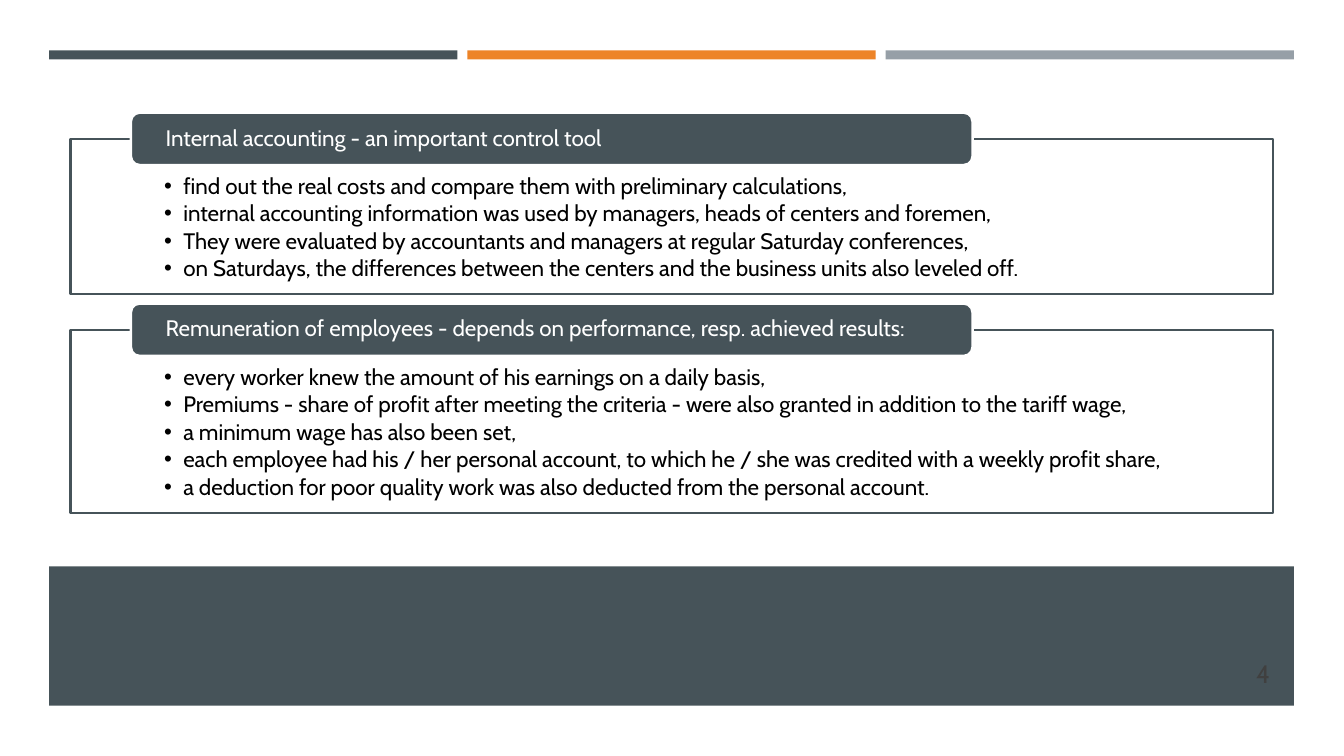
from lxml import etree
from pptx import Presentation
from pptx import util as u
from pptx.dml import color
from pptx.enum import shapes, text
from pptx.oxml import ns

SLATE, ORANGE, GREY, WHITE = "465359", "ED8428", "969FA7", "FFFFFF"
RECT, ROUNDED = shapes.MSO_SHAPE.RECTANGLE, shapes.MSO_SHAPE.ROUNDED_RECTANGLE

TOPICS = [
    (3.5, 3.91, "Internal accounting - an important control tool", [
        "find out the real costs and compare them with preliminary calculations,",
        "internal accounting information was used by managers, heads of centers and foremen,",
        "They were evaluated by accountants and managers at regular Saturday conferences,",
        "on Saturdays, the differences between the centers and the business units also leveled off.",
    ]),
    (8.31, 4.62, "Remuneration of employees - depends on performance, resp. achieved results:", [
        "every worker knew the amount of his earnings on a daily basis,",
        "Premiums - share of profit after meeting the criteria - were also granted in addition to the tariff wage,",
        "a minimum wage has also been set,",
        "each employee had his / her personal account, to which he / she was credited with a weekly profit share,",
        "a deduction for poor quality work was also deducted from the personal account.",
    ]),
]


def rgb(code):
    """Turn a hex string into a colour."""
    return color.RGBColor.from_string(code)


def add_block(slide, box, fill, line=None, kind=RECT):
    """Add a flat preset shape in a box given in centimetres."""
    block = slide.shapes.add_shape(kind, *map(u.Cm, box))
    block.shadow.inherit = False
    block.fill.solid()
    block.fill.fore_color.rgb = rgb(fill)
    if line:
        block.line.color.rgb = rgb(line)
        block.line.width = u.Pt(1.75)
    else:
        block.line.fill.background()
    return block


def add_bullet(paragraph):
    """Give a paragraph a hanging round bullet."""
    props = paragraph._p.get_or_add_pPr()
    props.set("marL", str(u.Cm(0.48)))
    props.set("indent", str(-u.Cm(0.48)))
    etree.SubElement(props, ns.qn("a:buFont")).set("typeface", "Arial")
    etree.SubElement(props, ns.qn("a:buChar")).set("char", "•")


def write(holder, lines, tint="000000", size=16, insets=(0, 0, 0, 0), after=0,
          bullets=False, anchor=text.MSO_ANCHOR.MIDDLE, align=text.PP_ALIGN.LEFT):
    """Write lines of text into a shape with the given format."""
    frame = holder.text_frame
    frame.word_wrap = True
    frame.vertical_anchor = anchor
    (frame.margin_left, frame.margin_top,
     frame.margin_right, frame.margin_bottom) = map(u.Cm, insets)
    for index, line in enumerate(lines):
        paragraph = frame.paragraphs[0] if index == 0 else frame.add_paragraph()
        paragraph.alignment = align
        paragraph.line_spacing = 0.9
        paragraph.space_after = u.Pt(after)
        if bullets:
            add_bullet(paragraph)
        run = paragraph.add_run()
        run.text = line
        run.font.name = "Cabin"
        run.font.size = u.Pt(size)
        run.font.color.rgb = rgb(tint)


def add_top_bars(slide, left, top, width, height, gap=0.25):
    """Split a strip into three equal coloured bars."""
    tints = (SLATE, ORANGE, GREY)
    bar = (width - gap * (len(tints) - 1)) / len(tints)
    for index, tint in enumerate(tints):
        add_block(slide, (left + index * (bar + gap), top, bar, height), tint)


def add_topic(slide, left, top, width, height, heading, points):
    """Add an outlined panel of points with a heading tab on its top edge."""
    panel = add_block(slide, (left, top, width, height), WHITE, SLATE)
    write(panel, points, insets=(2.36, 0.91, 2.36, 0.3), after=2.4,
          bullets=True, anchor=text.MSO_ANCHOR.TOP)
    tab = add_block(slide, (left + 1.52, top - 0.66, width * 0.7, 1.32),
                    SLATE, WHITE, ROUNDED)
    write(tab, [heading], tint=WHITE, insets=(0.81, 0, 0.81, 0))


def add_footer(slide, left, top, width, height, number):
    """Add the bottom band with the page number at its lower right."""
    add_block(slide, (left, top, width, height), SLATE)
    page = slide.shapes.add_textbox(
        *map(u.Cm, (left + width - 2.6, top + height - 1.25, 2, 1)))
    write(page, [number], tint="404040", size=18, align=text.PP_ALIGN.RIGHT)


def main():
    """Build and save the slide."""
    deck = Presentation()
    deck.slide_width, deck.slide_height = u.Cm(33.87), u.Cm(19.05)
    slide = deck.slides.add_slide(deck.slide_layouts[6])
    add_top_bars(slide, 1.24, 1.27, 31.37, 0.26)
    add_block(slide, (0, 1.5, 33.87, 17.55), WHITE)
    add_footer(slide, 1.24, 14.27, 31.37, 3.51, "4")
    for top, height, heading, points in TOPICS:
        add_topic(slide, 1.78, top, 30.3, height, heading, points)
    deck.save("out.pptx")


if __name__ == "__main__":
    main()
